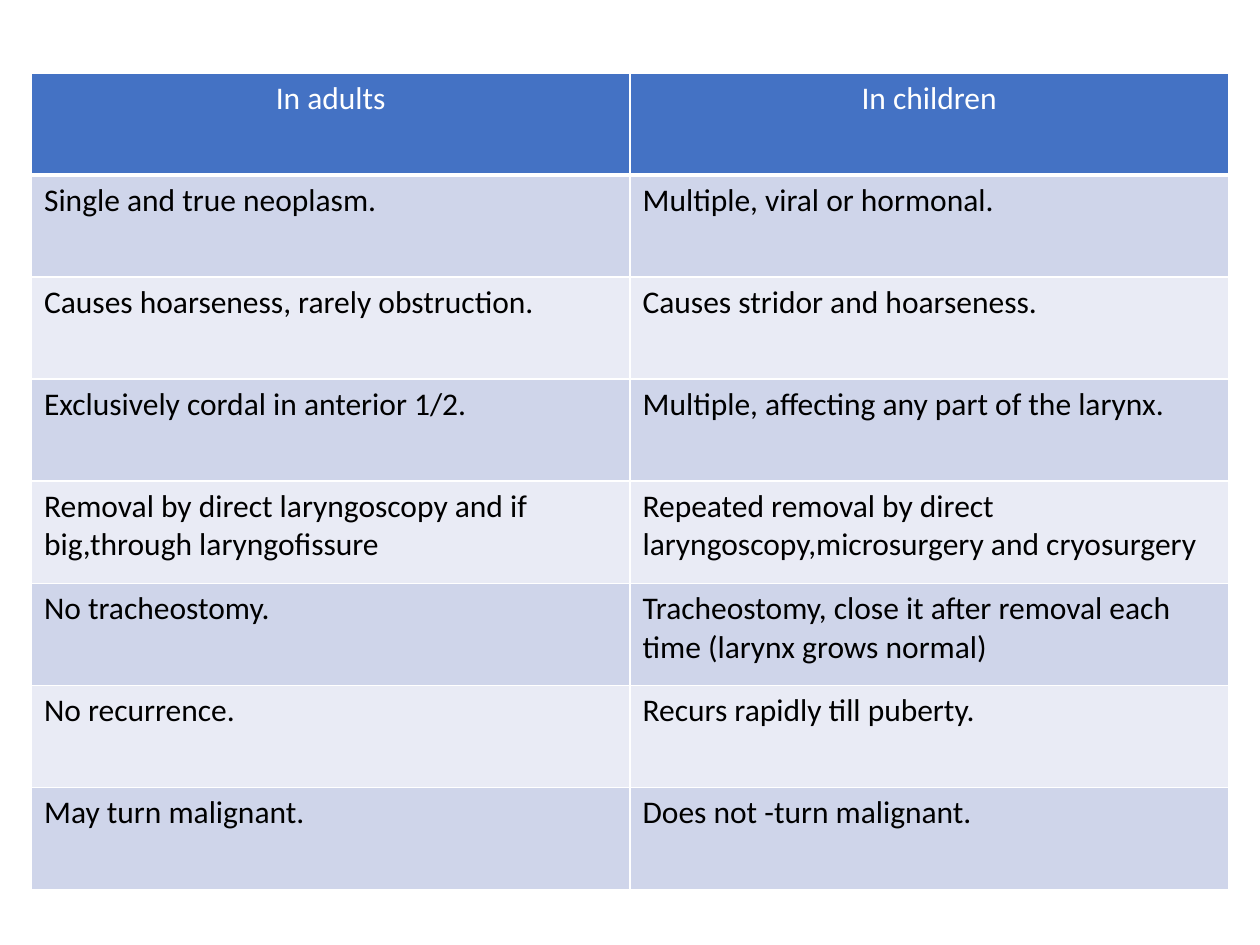
from lxml import etree
from pptx import Presentation
from pptx.dml.color import RGBColor
from pptx.enum import text
from pptx.oxml import ns
from pptx.util import Inches, Pt

WHITE = RGBColor(0xFF, 0xFF, 0xFF)
BLACK = RGBColor(0, 0, 0)
HEADER_BLUE = RGBColor(0x44, 0x72, 0xC4)
BANDS = (RGBColor(0xE9, 0xEB, 0xF5), RGBColor(0xCF, 0xD5, 0xEA))
ROW_HEIGHT = 0.81

COMPARISON = [
    ("In adults", "In children"),
    ("Single and true neoplasm.", "Multiple, viral or hormonal."),
    ("Causes hoarseness, rarely obstruction.", "Causes stridor and hoarseness."),
    ("Exclusively cordal in anterior 1/2.", "Multiple, affecting any part of the larynx."),
    ("Removal by direct laryngoscopy and if big,through laryngofissure",
     "Repeated removal by direct laryngoscopy,microsurgery and cryosurgery"),
    ("No tracheostomy.",
     "Tracheostomy, close it after removal each time (larynx grows normal)"),
    ("No recurrence.", "Recurs rapidly till puberty."),
    ("May turn malignant.", "Does not -turn malignant."),
]


def add_borders(cell, color, bottom):
    properties = cell._tc.get_or_add_tcPr()
    widths = {"L": 1, "R": 1, "T": 1, "B": bottom}
    for position, (side, width) in enumerate(widths.items()):
        line = etree.Element(ns.qn(f"a:ln{side}"), w=str(Pt(width)))
        fill = etree.SubElement(line, ns.qn("a:solidFill"))
        etree.SubElement(fill, ns.qn("a:srgbClr"), val=str(color))
        properties.insert(position, line)


def format_cell(cell, wording, row):
    header = row == 0
    cell.fill.solid()
    cell.fill.fore_color.rgb = HEADER_BLUE if header else BANDS[row % 2]
    cell.text_frame.text = wording
    para = cell.text_frame.paragraphs[0]
    para.alignment = text.PP_ALIGN.CENTER if header else text.PP_ALIGN.LEFT
    font = para.runs[0].font
    font.name = "Calibri"
    font.size = Pt(18)
    font.bold = False
    font.color.rgb = WHITE if header else BLACK
    add_borders(cell, WHITE, bottom=3 if header else 1)


def add_comparison_table(slide, left, top, width, row_height):
    rows, columns = len(COMPARISON), len(COMPARISON[0])
    table = slide.shapes.add_table(
        rows, columns, left, top, width, row_height * rows).table
    for row, entries in enumerate(COMPARISON):
        table.rows[row].height = row_height
        for column, wording in enumerate(entries):
            format_cell(table.cell(row, column), wording, row)


def main():
    deck = Presentation()
    deck.slide_width, deck.slide_height = Inches(10), Inches(7.5)
    slide = deck.slides.add_slide(deck.slide_layouts[6])
    add_comparison_table(slide, Inches(0.25), Inches(0.58), Inches(9.5), Inches(ROW_HEIGHT))
    deck.save("out.pptx")


if __name__ == "__main__":
    main()
